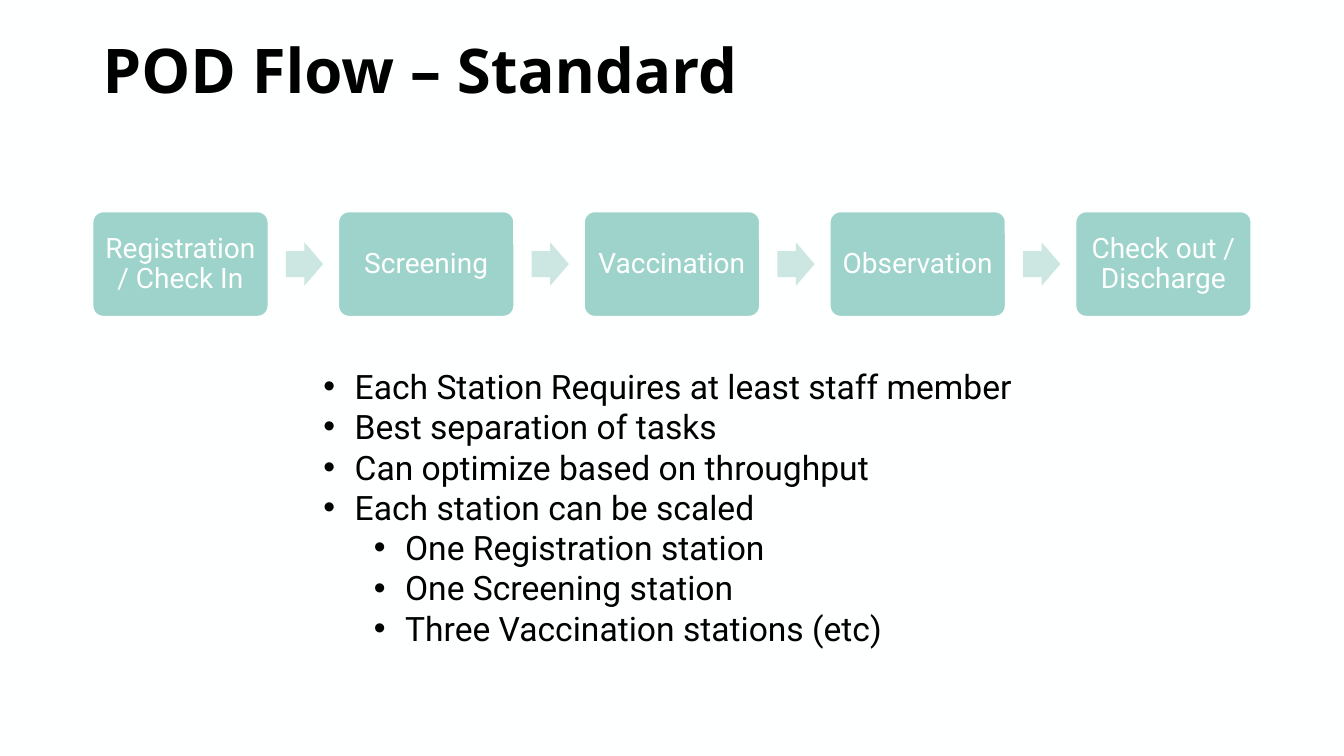
from lxml import etree
from pptx import Presentation
from pptx.dml.color import RGBColor
from pptx.enum.shapes import MSO_SHAPE
from pptx.enum.text import MSO_ANCHOR, MSO_AUTO_SIZE, PP_ALIGN
from pptx.oxml.ns import qn
from pptx.util import Inches, Pt

ROUND, ARROW = MSO_SHAPE.ROUNDED_RECTANGLE, MSO_SHAPE.RIGHT_ARROW
MIDDLE, CENTER = MSO_ANCHOR.MIDDLE, PP_ALIGN.CENTER
GROW = MSO_AUTO_SIZE.SHAPE_TO_FIT_TEXT

COLORS = {"paper": "FEFFFF", "ink": "000000", "step": "9DD3CA", "arrow": "CCE6E1"}
STEPS = ["Registration / Check In", "Screening", "Vaccination",
         "Observation", "Check out / Discharge"]
NOTES = [
    (0, "Each Station Requires at least staff member"),
    (0, "Best separation of tasks"),
    (0, "Can optimize based on throughput"),
    (0, "Each station can be scaled"),
    (1, "One Registration station"),
    (1, "One Screening station"),
    (1, "Three Vaccination stations (etc)"),
]


def color(name):
    return RGBColor.from_string(COLORS[name])


def add_run(para, text, size, font, ink, bold=False):
    run = para.add_run()
    run.text = text
    run.font.size, run.font.name, run.font.bold = Pt(size), font, bold
    run.font.color.rgb = color(ink)


def add_box(slide, kind, box, fill):
    shape = slide.shapes.add_shape(kind, *map(Inches, box))
    shape.shadow.inherit = False
    shape.fill.solid()
    shape.fill.fore_color.rgb = color(fill)
    shape.line.fill.background()
    return shape


def add_title(slide, box, text):
    frame = slide.shapes.add_textbox(*map(Inches, box)).text_frame
    frame.word_wrap, frame.vertical_anchor = True, MIDDLE
    para = frame.paragraphs[0]
    para.line_spacing = 0.9
    add_run(para, text, 44, "Open Sans", "ink", True)


def add_step(slide, box, text):
    shape = add_box(slide, ROUND, box, "step")
    shape.adjustments[0] = 0.1
    shape.line.color.rgb = color("paper")
    shape.line.width = Pt(1)
    frame = shape.text_frame
    frame.word_wrap, frame.vertical_anchor = True, MIDDLE
    frame.margin_left = frame.margin_right = Inches(0.08)
    frame.margin_top = frame.margin_bottom = Inches(0.08)
    para = frame.paragraphs[0]
    para.alignment, para.line_spacing = CENTER, 0.9
    add_run(para, text, 20, "Roboto", "paper")


def add_flow(slide, box, steps):
    """Spread the steps evenly over the box, gaps 0.4 of a step wide, with an arrow in each."""
    left, top, width, height = box
    step = width / (len(steps) + 0.4 * (len(steps) - 1))
    wide, tall = 0.37, 0.43
    for i, text in enumerate(steps):
        x = left + i * 1.4 * step
        add_step(slide, (x, top, step, height), text)
        if i < len(steps) - 1:
            spot = (x + 1.1 * step, top + (height - tall) / 2, wide, tall)
            arrow = add_box(slide, ARROW, spot, "arrow")
            arrow.adjustments[0], arrow.adjustments[1] = 0.6, 0.5


def add_notes(slide, box, notes):
    frame = slide.shapes.add_textbox(*map(Inches, box)).text_frame
    frame.word_wrap, frame.auto_size = False, GROW
    for i, (level, text) in enumerate(notes):
        para = frame.add_paragraph() if i else frame.paragraphs[0]
        para.level = level
        props = para._p.get_or_add_pPr()
        props.set("marL", str(Inches(0.31 + 0.5 * level)))
        props.set("indent", str(-Inches(0.31)))
        etree.SubElement(props, qn("a:buFont")).set("typeface", "Arial")
        etree.SubElement(props, qn("a:buChar")).set("char", "•")
        add_run(para, text, 24, "Roboto", "ink")


def main():
    deck = Presentation()
    deck.slide_width, deck.slide_height = Inches(13.33), Inches(7.5)
    slide = deck.slides.add_slide(deck.slide_layouts[6])
    slide.background.fill.solid()
    slide.background.fill.fore_color.rgb = color("paper")
    add_title(slide, (0.92, 0, 11.5, 1.45), "POD Flow – Standard")
    add_flow(slide, (0.92, 2.1, 11.49, 1.04), STEPS)
    add_notes(slide, (3.11, 3.58, 7.12, 2.93), NOTES)
    deck.save("out.pptx")


if __name__ == "__main__":
    main()
